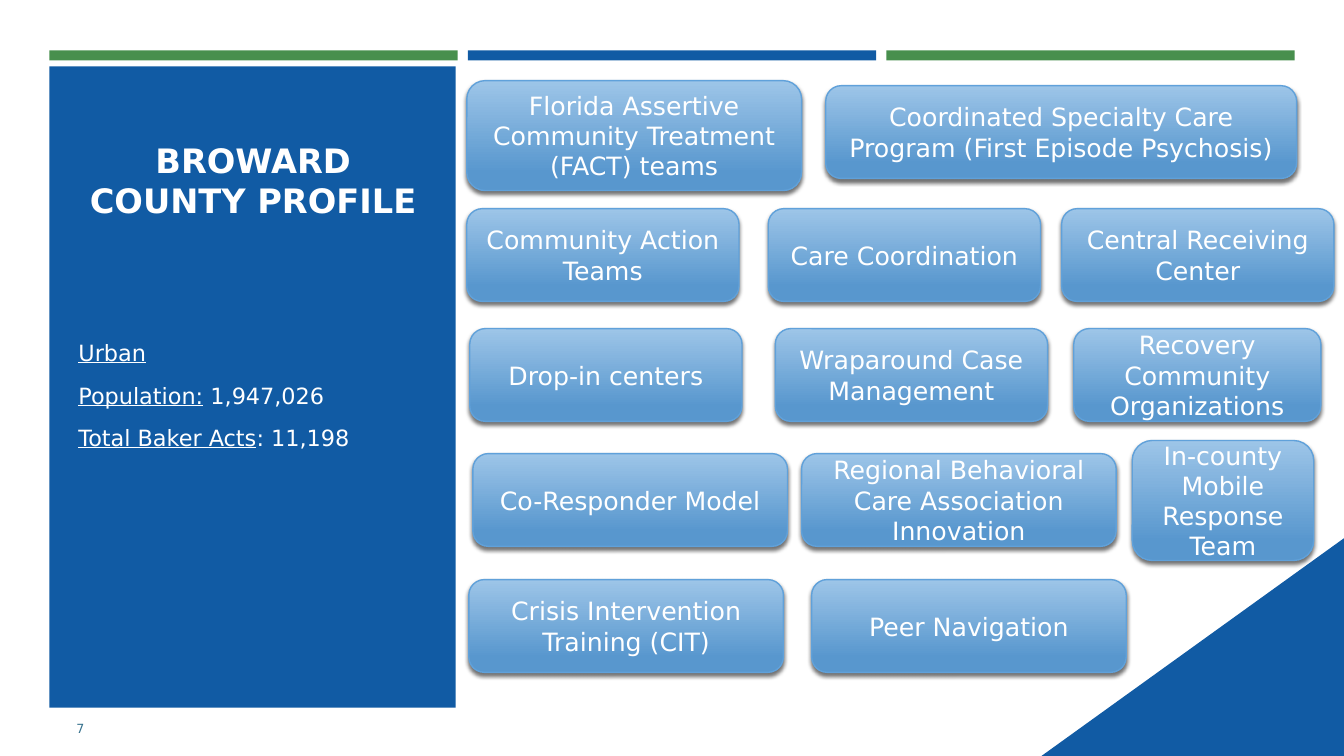
from collections import namedtuple
from lxml import etree
from pptx import Presentation
from pptx.dml.color import RGBColor
from pptx.enum.shapes import MSO_SHAPE as Shape
from pptx.enum.text import MSO_ANCHOR as Anchor, PP_ALIGN as Align
from pptx.oxml.ns import qn
from pptx.util import Inches, Pt

Box = namedtuple("Box", "x y w h")
COLS, ROWS = 13.33, 7.5
FONT = "DejaVu Sans"
BLUE, GREEN, WHITE = "115BA4", "488F4D", "FFFFFF"
SKY, STEEL, EDGE, TEAL = "9DC5E8", "5897CE", "60A1DA", "36718D"
FACTS = [("Urban", ""), ("Population:", " 1,947,026"),
         ("Total Baker Acts", ": 11,198")]
CARDS = [
    (0, 1.09, [(0, 3.32, "Florida Assertive Community Treatment (FACT) teams")]),
    (0.05, 0.92, [(3.56, 4.67, "Coordinated Specialty Care Program (First Episode Psychosis)")]),
    (1.27, 0.92, [(0, 2.7, "Community Action Teams"),
                  (2.99, 2.7, "Care Coordination"),
                  (5.9, 2.7, "Central Receiving Center")]),
    (2.46, 0.92, [(0.03, 2.7, "Drop-in centers"),
                  (3.06, 2.7, "Wraparound Case Management"),
                  (6.02, 2.45, "Recovery Community Organizations")]),
    (3.7, 0.92, [(0.06, 3.12, "Co-Responder Model"),
                 (3.32, 3.12, "Regional Behavioral Care Association Innovation")]),
    (3.57, 1.19, [(6.6, 1.8, "In-county\nMobile Response Team")]),
    (4.95, 0.92, [(0.02, 3.12, "Crisis Intervention Training (CIT)"),
                  (3.42, 3.12, "Peer Navigation")]),
]


def tint(code):
    """Turn a hex string into a colour."""
    return RGBColor.from_string(code)


def inner(box, x, y, w, h):
    """Return a box placed from the corner of another."""
    return Box(box.x + x, box.y + y, w, h)


def style(font, size, code, bold=False, under=False):
    """Format one run."""
    font.name, font.size, font.bold, font.underline = FONT, Pt(size), bold, under
    font.color.rgb = tint(code)


def write(frame, text, size, code, align=Align.LEFT, bold=False):
    """Fill a frame with plain text."""
    frame.word_wrap = True
    frame.text = text
    for para in frame.paragraphs:
        para.alignment = align
        for run in para.runs:
            style(run.font, size, code, bold)


def label(slide, box):
    """Add a text box and return its frame."""
    frame = slide.shapes.add_textbox(*map(Inches, box)).text_frame
    frame.word_wrap = True
    return frame


def block(slide, box, code):
    """Add a plain filled rectangle."""
    shape = slide.shapes.add_shape(Shape.RECTANGLE, *map(Inches, box))
    shape.shadow.inherit = False
    shape.fill.solid()
    shape.fill.fore_color.rgb = tint(code)
    shape.line.fill.background()


def bars(slide, box):
    """Lay three equal bars across the top."""
    gap = 0.1
    wide = (box.w - 2 * gap) / 3
    for i, code in enumerate((GREEN, BLUE, GREEN)):
        block(slide, inner(box, i * (wide + gap), 0, wide, box.h), code)


def corner(slide, box):
    """Draw the triangle that fills the lower right corner."""
    right, low = box.x + box.w, box.y + box.h
    pen = slide.shapes.build_freeform(Inches(box.x), Inches(low))
    pen.add_line_segments([(Inches(right), Inches(box.y)), (Inches(right), Inches(low))])
    shape = pen.convert_to_shape()
    shape.shadow.inherit = False
    shape.fill.solid()
    shape.fill.fore_color.rgb = tint(BLUE)
    shape.line.fill.background()


def panel(slide, box):
    """Build the side panel with its title and facts."""
    block(slide, box, BLUE)
    title = label(slide, inner(box, 0.23, 0.68, 3.58, 1.21))
    write(title, "BROWARD COUNTY PROFILE", 24, WHITE, Align.CENTER, True)
    frame = label(slide, inner(box, 0.19, 2.63, 3.63, 3.28))
    for i, (name, value) in enumerate(FACTS):
        para = frame.add_paragraph() if i else frame.paragraphs[0]
        para.line_spacing, para.space_after = 1.1, Pt(6)
        para.space_before = Pt(3.2 if i else 0)
        for text, under in ((name, True), (value, False)):
            if text:
                run = para.add_run()
                run.text = text
                style(run.font, 16, WHITE, under=under)


def shade(shape):
    """Give a shape a soft shadow below it."""
    shape.shadow.inherit = False
    effects = shape._element.spPr.find(qn("a:effectLst"))
    outer = etree.SubElement(effects, qn("a:outerShdw"), blurRad=str(Pt(3)),
                             dist=str(Pt(2)), dir="5400000", algn="ctr", rotWithShape="0")
    black = etree.SubElement(outer, qn("a:srgbClr"), val="000000")
    etree.SubElement(black, qn("a:alpha"), val="55000")


def card(slide, box, text):
    """Add one rounded service card."""
    shape = slide.shapes.add_shape(Shape.ROUNDED_RECTANGLE, *map(Inches, box))
    shape.fill.gradient()
    shape.fill.gradient_angle = 270
    for stop, code, spot in zip(shape.fill.gradient_stops, (SKY, STEEL), (0, 0.84)):
        stop.color.rgb, stop.position = tint(code), spot
    shape.line.color.rgb, shape.line.width = tint(EDGE), Pt(1)
    shade(shape)
    shape.text_frame.vertical_anchor = Anchor.MIDDLE
    write(shape.text_frame, text, 18, WHITE, Align.CENTER)


def cards(slide, box):
    """Place every service card in its row."""
    for top, high, row in CARDS:
        for left, wide, text in row:
            card(slide, inner(box, left, top, wide, high), text)


def folio(slide, box):
    """Write the slide number."""
    frame = label(slide, box)
    frame.vertical_anchor = Anchor.MIDDLE
    write(frame, "7", 9, TEAL)


def main():
    """Build and save the slide."""
    deck = Presentation()
    deck.slide_width, deck.slide_height = Inches(COLS), Inches(ROWS)
    slide = deck.slides.add_slide(deck.slide_layouts[6])
    bars(slide, Box(0.49, 0.5, 12.35, 0.1))
    corner(slide, Box(COLS - 3, ROWS - 2.16, 3, 2.16))
    panel(slide, Box(0.49, 0.66, 4.03, 6.36))
    folio(slide, Box(0.66, 7.03, 1.15, 0.4))
    cards(slide, Box(4.63, 0.8, 8.6, 5.87))
    deck.save("out.pptx")


if __name__ == "__main__":
    main()
